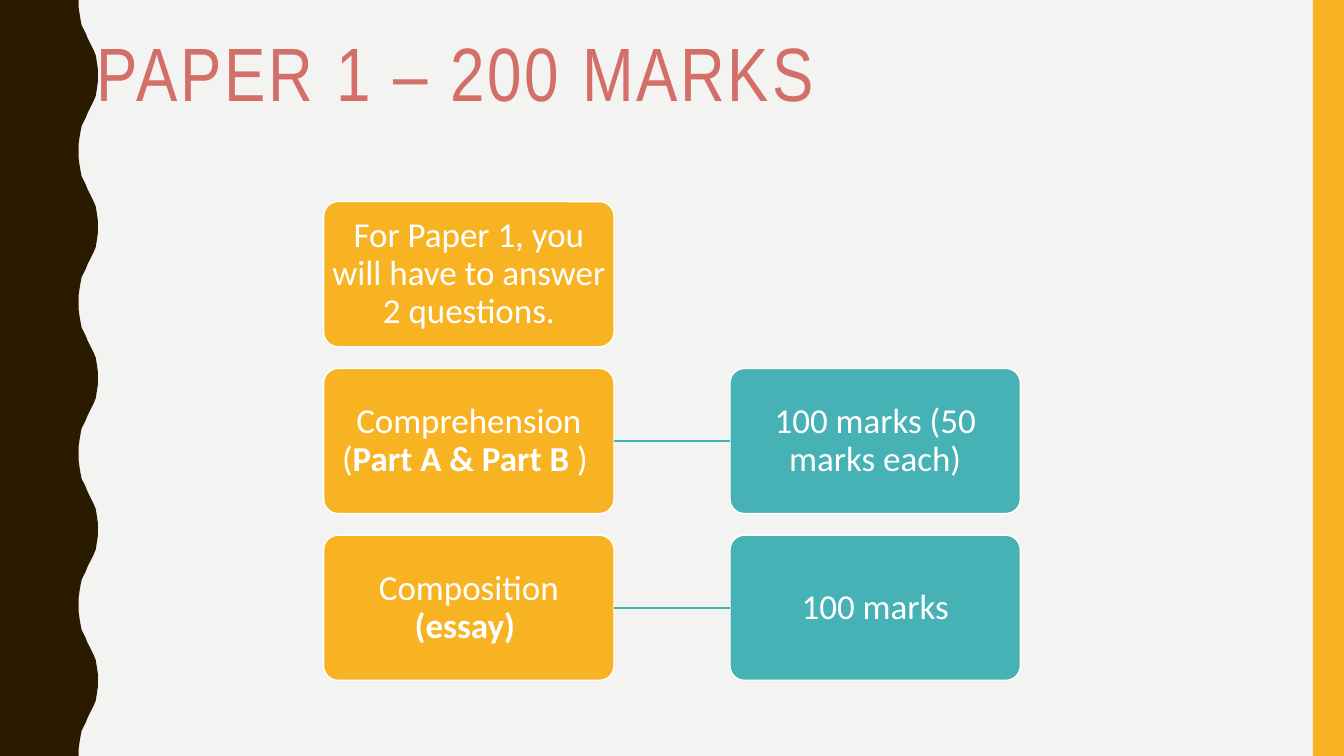
from dataclasses import dataclass

from lxml.etree import SubElement
from pptx import Presentation
from pptx.dml.color import RGBColor
from pptx.enum.shapes import MSO_CONNECTOR, MSO_SHAPE
from pptx.enum.text import MSO_ANCHOR, MSO_AUTO_SIZE, PP_ALIGN
from pptx.oxml.ns import qn
from pptx.util import Inches, Pt

TITLE = "PAPER 1 – 200 MARKS"
# Each row: question box, then the marks box if any; a box is a list of (text, bold) runs
ROWS = [
    ([("For Paper 1, you will have to answer 2 questions.", False)], None),
    ([("Comprehension (", False), ("Part A & Part B ", True), (") ", False)],
     [("100 marks (50 marks each)", False)]),
    ([("Composition ", False), ("(essay) ", True)], [("100 marks", False)]),
]


@dataclass(frozen=True)
class Theme:
    background: str = "F3F3F2"
    wave: str = "2A1A00"
    gold: str = "F8B323"
    teal: str = "46B2B5"
    coral: str = "D36F68"
    white: str = "FFFFFF"
    title_font: str = "Arial Narrow"
    body_font: str = "Calibri"
    title_size: int = 54
    body_size: int = 25


THEME = Theme()
SLIDE_W, SLIDE_H = 13.33, 7.5
BAR_W = 0.31
GRID_LEFT, GRID_TOP = 3.21, 2.0
BOX_W, BOX_H = 2.88, 1.44
COL_STEP, ROW_STEP = 4.03, 1.655
TEXT_INSET = 0.02

# Half a ripple of the left edge, trough to crest, as (x, y) in hundredths of an inch
UNIT = Inches(0.01)
RIPPLES = 5
RIPPLE_H = 150
HALF_RIPPLE = [
    (78, 0), (78, 7), (79, 14), (80, 20), (81, 25),
    (83, 29), (85, 33), (87, 38), (89, 42), (91, 46),
    (93, 50), (95, 55), (96, 61), (97, 68), (97, 75),
]


def rgb(color):
    return RGBColor.from_string(color)


def paint(sp, fill, line=None):
    sp.shadow.inherit = False
    sp.fill.solid()
    sp.fill.fore_color.rgb = rgb(fill)
    if line:
        sp.line.color.rgb = rgb(line)
        sp.line.width = Pt(1)
    else:
        sp.line.fill.background()


def add_run(p, text, font, size, color, bold=False):
    r = p.add_run()
    r.text = text
    r.font.name, r.font.size, r.font.bold = font, Pt(size), bold
    r.font.color.rgb = rgb(color)
    return r


def add_wave(slide):
    ripple = HALF_RIPPLE + [(x, RIPPLE_H - y) for x, y in HALF_RIPPLE[-2::-1]]
    edge = [(x, y + i * RIPPLE_H) for i in range(RIPPLES) for x, y in ripple]
    builder = slide.shapes.build_freeform(0, 0, scale=UNIT)
    builder.add_line_segments(edge + [(0, RIPPLES * RIPPLE_H)], close=True)
    paint(builder.convert_to_shape(), THEME.wave)


def add_bar(slide):
    bar = slide.shapes.add_shape(
        MSO_SHAPE.RECTANGLE, Inches(SLIDE_W - BAR_W), 0, Inches(BAR_W), Inches(SLIDE_H))
    paint(bar, THEME.gold)


def set_title(slide):
    title = slide.shapes.title
    slide.shapes._spTree.append(title._element)  # in front of the wave
    title.left, title.top = Inches(0.86), Inches(0.31)
    title.width, title.height = Inches(12.48), Inches(1.45)
    tf = title.text_frame
    tf.word_wrap, tf.auto_size = True, MSO_AUTO_SIZE.NONE
    tf.vertical_anchor = MSO_ANCHOR.TOP
    p = tf.paragraphs[0]
    p.alignment, p.line_spacing = PP_ALIGN.LEFT, 0.9
    r = add_run(p, TITLE, THEME.title_font, THEME.title_size, THEME.coral)
    r.font._element.set("spc", "200")


def add_box(slide, col, row, runs, fill):
    sp = slide.shapes.add_shape(
        MSO_SHAPE.ROUNDED_RECTANGLE,
        Inches(GRID_LEFT + col * COL_STEP), Inches(GRID_TOP + row * ROW_STEP),
        Inches(BOX_W), Inches(BOX_H))
    sp.adjustments[0] = 0.1
    paint(sp, fill, THEME.white)
    tf = sp.text_frame
    tf.word_wrap, tf.vertical_anchor = True, MSO_ANCHOR.MIDDLE
    tf.margin_left = tf.margin_right = Inches(TEXT_INSET)
    tf.margin_top = tf.margin_bottom = Inches(TEXT_INSET)
    p = tf.paragraphs[0]
    p.alignment, p.line_spacing = PP_ALIGN.CENTER, 0.9
    for text, bold in runs:
        add_run(p, text, THEME.body_font, THEME.body_size, THEME.white, bold)
    return sp


def link(slide, start, end):
    line = slide.shapes.add_connector(MSO_CONNECTOR.STRAIGHT, 0, 0, 0, 0)
    line.begin_connect(start, 3)
    line.end_connect(end, 1)
    line.line.color.rgb = rgb(THEME.teal)
    line.line.width = Pt(1)
    SubElement(line._element.spPr, qn("a:effectLst"))


def main():
    prs = Presentation()
    prs.slide_width, prs.slide_height = Inches(SLIDE_W), Inches(SLIDE_H)
    slide = prs.slides.add_slide(prs.slide_layouts[5])
    slide.background.fill.solid()
    slide.background.fill.fore_color.rgb = rgb(THEME.background)
    add_wave(slide)
    add_bar(slide)
    set_title(slide)
    for row, (question, marks) in enumerate(ROWS):
        question_box = add_box(slide, 0, row, question, THEME.gold)
        if marks:
            marks_box = add_box(slide, 1, row, marks, THEME.teal)
            link(slide, question_box, marks_box)
    prs.save("out.pptx")


if __name__ == "__main__":
    main()
